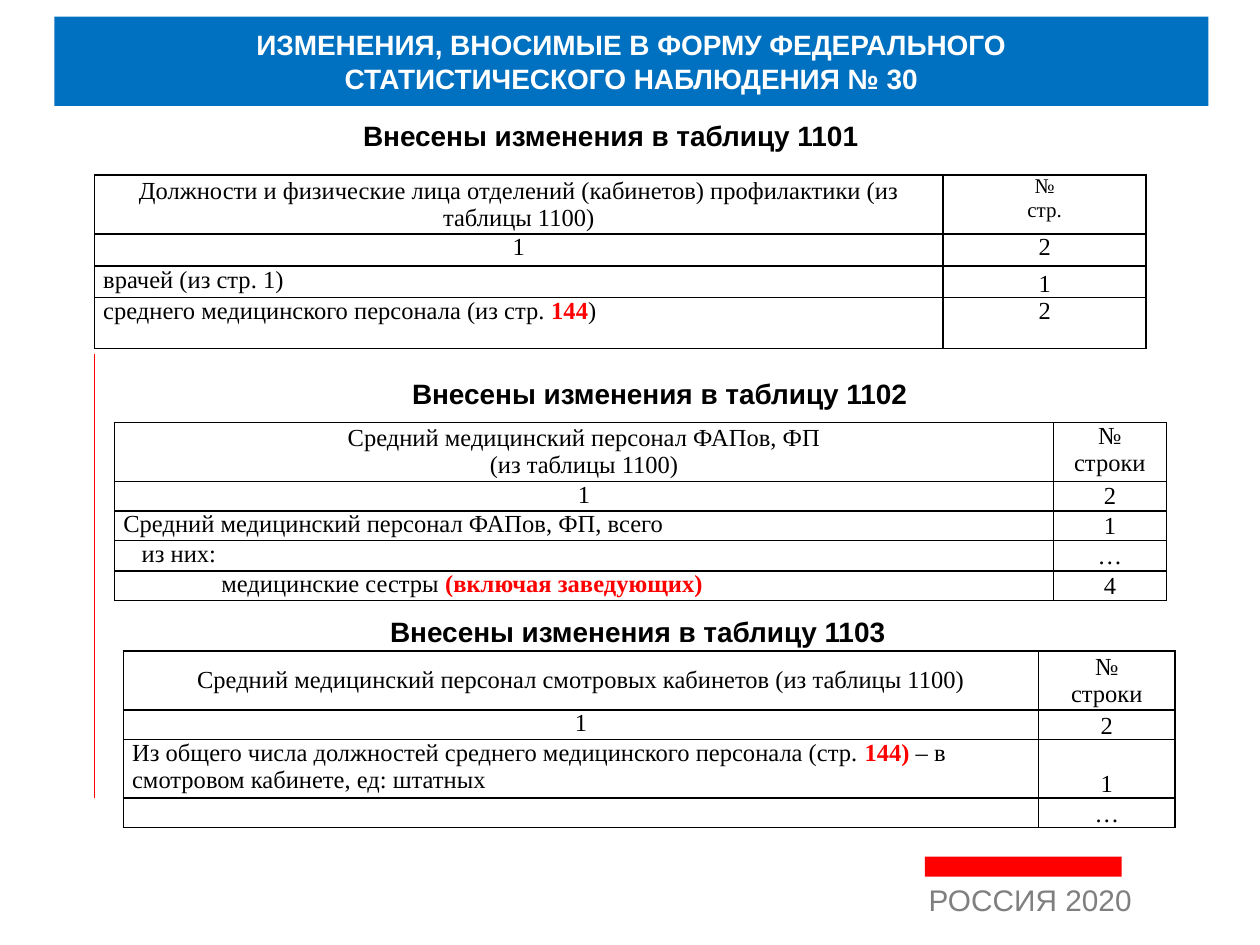
from dataclasses import dataclass

from lxml import etree
from pptx import Presentation
from pptx.dml.color import RGBColor
from pptx.enum import shapes, text
from pptx.oxml import ns
from pptx.util import Pt

LEFT, CENTER = text.PP_ALIGN.LEFT, text.PP_ALIGN.CENTER
TOP, MIDDLE, BOTTOM = text.MSO_ANCHOR.TOP, text.MSO_ANCHOR.MIDDLE, text.MSO_ANCHOR.BOTTOM


@dataclass(frozen=True)
class Theme:
    sans: str = "Arial"
    serif: str = "Times New Roman"
    banner: RGBColor = RGBColor(0x00, 0x70, 0xC0)
    accent: RGBColor = RGBColor(0xFF, 0x00, 0x00)
    ink: RGBColor = RGBColor(0x00, 0x00, 0x00)
    light: RGBColor = RGBColor(0xFF, 0xFF, 0xFF)
    muted: RGBColor = RGBColor(0x7F, 0x7F, 0x7F)
    heading_size: float = 16
    footer_size: float = 17
    cell_size: float = 14
    small_size: float = 12


@dataclass(frozen=True)
class Entry:
    words: str
    align: text.PP_ALIGN = CENTER
    anchor: text.MSO_ANCHOR = TOP
    indent: float = 0
    small: bool = False


class SlideBuilder:
    def __init__(self, page, theme):
        self.page = page
        self.theme = theme

    def apply(self, target, values):
        for name, value in values.items():
            setattr(target, name, value)

    def place(self, shape, box):
        names = ("left", "top", "width", "height")
        self.apply(shape, dict(zip(names, map(Pt, box))))

    def fill_text(self, frame, words, font, size, color, bold=False, align=CENTER):
        for number, line in enumerate(words.split("\n")):
            para = frame.add_paragraph() if number else frame.paragraphs[0]
            self.apply(para, {"alignment": align, "space_before": Pt(0)})
            if not line:
                end = etree.SubElement(para._p, ns.qn("a:endParaRPr"))
                end.set("sz", str(int(size * 100)))
            for order, part in enumerate(line.split("*")):
                if part:
                    marked = order % 2 == 1
                    span = para.add_run()
                    span.text = part
                    self.apply(span.font, {"name": font, "size": Pt(size), "bold": bold or marked})
                    span.font.color.rgb = self.theme.accent if marked else color

    def placeholder(self, holder, box, words, size, color, **options):
        self.place(holder, box)
        frame = holder.text_frame
        self.apply(frame, {"auto_size": text.MSO_AUTO_SIZE.NONE, "word_wrap": True})
        self.fill_text(frame, words, self.theme.sans, size, color, **options)
        return holder

    def title(self, box, words):
        theme = self.theme
        holder = self.placeholder(self.page.shapes.title, box, words,
                                  theme.heading_size, theme.light, bold=True)
        holder.fill.solid()
        holder.fill.fore_color.rgb = theme.banner
        holder.text_frame.vertical_anchor = MIDDLE

    def footer(self, box, words):
        theme = self.theme
        holder = self.placeholder(self.page.placeholders[1], box, words,
                                  theme.footer_size, theme.muted, align=LEFT)
        holder.text_frame.vertical_anchor = TOP

    def bar(self, box):
        shape = self.page.shapes.add_shape(shapes.MSO_SHAPE.RECTANGLE, *map(Pt, box))
        shape.shadow.inherit = False
        shape.fill.solid()
        shape.fill.fore_color.rgb = self.theme.accent
        shape.line.fill.background()

    def rule(self, *ends):
        line = self.page.shapes.add_connector(shapes.MSO_CONNECTOR.STRAIGHT, *map(Pt, ends))
        line.line.color.rgb = self.theme.accent
        line.line.width = Pt(0.75)
        etree.SubElement(line._element.spPr, ns.qn("a:effectLst"))

    def heading(self, box, words):
        theme = self.theme
        frame = self.page.shapes.add_textbox(*map(Pt, box)).text_frame
        self.apply(frame, {"word_wrap": True, "vertical_anchor": MIDDLE})
        self.fill_text(frame, words, theme.sans, theme.heading_size, theme.ink, bold=True)

    def border(self, cell):
        properties = cell._tc.get_or_add_tcPr()
        for side in ("lnL", "lnR", "lnT", "lnB"):
            edge = etree.SubElement(properties, ns.qn(f"a:{side}"), w=str(Pt(1)))
            fill = etree.SubElement(edge, ns.qn("a:solidFill"))
            etree.SubElement(fill, ns.qn("a:srgbClr"), val=str(self.theme.ink))

    def cell(self, cell, entry):
        theme = self.theme
        self.border(cell)
        cell.fill.background()
        self.apply(cell, {"margin_left": Pt(5 + entry.indent), "margin_right": Pt(5),
                          "margin_top": 0, "margin_bottom": 0,
                          "vertical_anchor": entry.anchor})
        size = theme.small_size if entry.small else theme.cell_size
        self.fill_text(cell.text_frame, entry.words, theme.serif, size, theme.ink,
                       align=entry.align)

    def table(self, left, top, widths, heights, rows):
        table = self.page.shapes.add_table(len(rows), len(widths), Pt(left), Pt(top),
                                           Pt(sum(widths)), Pt(sum(heights))).table
        self.apply(table, {"first_row": False, "horz_banding": False})
        for column, width in zip(table.columns, widths):
            column.width = Pt(width)
        for row, height, entries in zip(table.rows, heights, rows):
            row.height = Pt(height)
            for cell, entry in zip(row.cells, entries):
                self.cell(cell, entry)


PREVENTION = [
    (Entry("Должности и физические лица отделений (кабинетов) профилактики (из таблицы 1100)",
           anchor=MIDDLE), Entry("№\nстр.", small=True)),
    (Entry("1"), Entry("2")),
    (Entry("врачей (из стр. 1)", LEFT), Entry("1", anchor=BOTTOM)),
    (Entry("среднего медицинского персонала (из стр. *144*)", LEFT), Entry("2")),
]
STATIONS = [
    (Entry("Средний медицинский персонал ФАПов, ФП\n(из таблицы 1100)", anchor=MIDDLE),
     Entry("№\nстроки")),
    (Entry("1"), Entry("2", anchor=MIDDLE)),
    (Entry("Средний медицинский персонал ФАПов, ФП, всего", LEFT), Entry("1", anchor=MIDDLE)),
    (Entry("из них:", LEFT, indent=10.5), Entry("…", anchor=MIDDLE)),
    (Entry("медицинские сестры *(включая заведующих)*", LEFT, indent=56),
     Entry("4", anchor=MIDDLE)),
]
EXAMINATION = [
    (Entry("Средний медицинский персонал смотровых кабинетов (из таблицы 1100)", anchor=MIDDLE),
     Entry("№\nстроки", anchor=MIDDLE)),
    (Entry("1"), Entry("2", anchor=BOTTOM)),
    (Entry("Из общего числа должностей среднего медицинского персонала (стр. *144)* – "
           "в смотровом кабинете, ед: штатных", LEFT), Entry("1", anchor=BOTTOM)),
    (Entry(""), Entry("…", anchor=BOTTOM)),
]


def main():
    deck = Presentation()
    deck.slide_width, deck.slide_height = Pt(720), Pt(540)
    page = deck.slides.add_slide(deck.slide_layouts[0])
    builder = SlideBuilder(page, Theme())
    builder.footer((523.5, 500.5, 135.5, 34), "РОССИЯ 2020")
    builder.bar((528.5, 489.5, 112.5, 11.5))
    builder.rule(54, 202.5, 54, 456)
    builder.title((31, 9.5, 659.5, 51),
                  "ИЗМЕНЕНИЯ, ВНОСИМЫЕ В ФОРМУ ФЕДЕРАЛЬНОГО\nСТАТИСТИЧЕСКОГО НАБЛЮДЕНИЯ № 30")
    line = 15.5
    sections = [
        ("1101", (20, 60.5, 658), (54, 100), (485, 116), (31, 18.5, 18, 29), PREVENTION),
        ("1102", (48, 207.5, 658), (65.5, 241.5), (536.5, 64.5),
         (2 * line, line, line, 17.5, line), STATIONS),
        ("1103", (65.5, 343.5, 598), (70.5, 372), (523, 78),
         (2 * line, line, 2 * line, line), EXAMINATION),
    ]
    for code, heading, corner, widths, heights, rows in sections:
        builder.heading((*heading, 34), f"Внесены изменения в таблицу {code}")
        builder.table(*corner, widths, heights, rows)
    deck.save("out.pptx")


if __name__ == "__main__":
    main()
